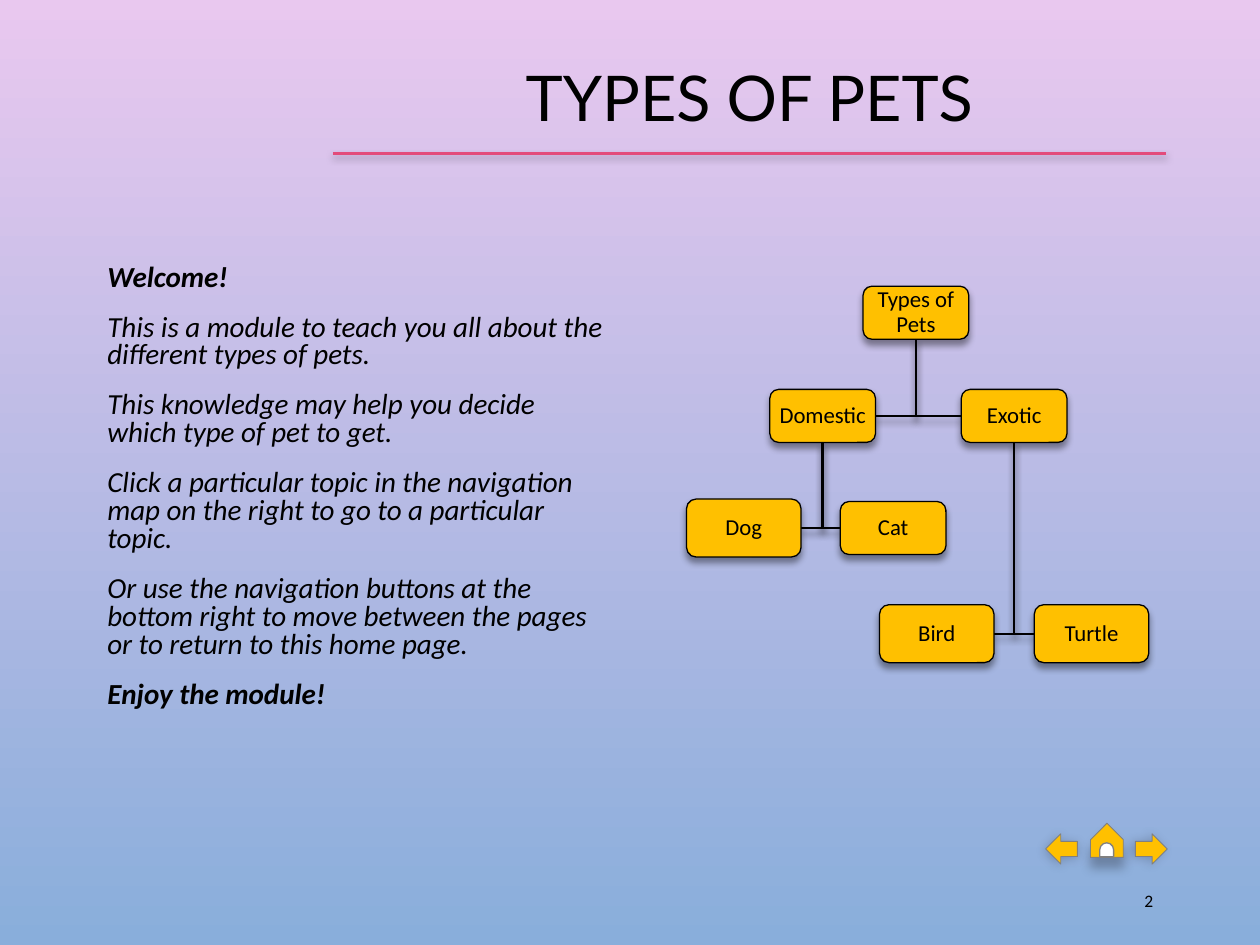
"""Build the home slide of a module on types of pets."""
from dataclasses import dataclass

from lxml import etree
from pptx import Presentation
from pptx.dml.color import RGBColor
from pptx.enum.shapes import MSO_CONNECTOR, MSO_SHAPE
from pptx.enum.text import MSO_ANCHOR, MSO_AUTO_SIZE, PP_ALIGN
from pptx.oxml.ns import qn
from pptx.util import Cm, Pt

ROUND = MSO_SHAPE.ROUNDED_RECTANGLE
HOUSE = MSO_SHAPE.PENTAGON
DOOR = MSO_SHAPE.FLOWCHART_DELAY
BACK = MSO_SHAPE.LEFT_ARROW
NEXT = MSO_SHAPE.RIGHT_ARROW
LINE = MSO_CONNECTOR.STRAIGHT
MIDDLE, TOP = MSO_ANCHOR.MIDDLE, MSO_ANCHOR.TOP
CENTER, LEFT, RIGHT = PP_ALIGN.CENTER, PP_ALIGN.LEFT, PP_ALIGN.RIGHT
FIXED = MSO_AUTO_SIZE.NONE


@dataclass(frozen=True)
class Theme:
    """Colours, fonts and type sizes of the slide."""
    ink: str = "000000"
    gold: str = "FFC000"
    pink: str = "E34B7A"
    grey: str = "808080"
    white: str = "FFFFFF"
    sky: tuple = ("E9C8EF", "89AEDB")
    head: str = "Lato"
    text: str = "Calibri"
    title: float = 36
    body: float = 16.6
    node: float = 13
    small: float = 10


THEME = Theme()
SMALL, LARGE = (2.13, 1.07), (2.31, 1.17)
NODES = {
    "Types of Pets": (17.4, 5.77, *SMALL),
    "Domestic": (15.52, 7.85, *SMALL),
    "Cat": (16.94, 10.11, *SMALL),
    "Dog": (13.84, 10.06, *LARGE),
    "Exotic": (19.38, 7.85, *SMALL),
    "Bird": (17.73, 12.19, *LARGE),
    "Turtle": (20.85, 12.19, *LARGE),
}
LINKS = [
    ("Exotic", "Turtle", 1),
    ("Exotic", "Bird", 1),
    ("Types of Pets", "Exotic", 1),
    ("Domestic", "Dog", 1.5),
    ("Domestic", "Cat", 1.25),
    ("Types of Pets", "Domestic", 1.25),
]
BODY = [
    "Welcome!",
    "This is a module to teach you all about the different types of pets.",
    "This knowledge may help you decide which type of pet to get.",
    "Click a particular topic in the navigation map on the right to go to a particular topic.",
    "Or use the navigation buttons at the bottom right to move between the pages "
    "or to return to this home page.",
    "Enjoy the module!",
]


def color(code):
    """Turn a hex code into a colour."""
    return RGBColor.from_string(code)


def place(shape, box):
    """Set place and size in centimetres."""
    shape.left, shape.top, shape.width, shape.height = map(Cm, box)


def stroke(shape, code, width):
    """Set line colour and width."""
    shape.line.color.rgb = color(code)
    shape.line.width = Pt(width)


def shade(shape, alpha=0, blur=4, dist=3, angle=90):
    """Give a shape its own shadow, or none when alpha is zero."""
    effect = etree.SubElement(shape._element.spPr, qn("a:effectLst"))
    if alpha:
        cast = etree.SubElement(
            effect, qn("a:outerShdw"), blurRad=str(Pt(blur)),
            dist=str(Pt(dist)), dir=str(angle * 60000), rotWithShape="0")
        tint = etree.SubElement(cast, qn("a:srgbClr"), val=THEME.ink)
        etree.SubElement(tint, qn("a:alpha"), val=str(alpha * 1000))


def write(shape, text, size, face=THEME.text, align=CENTER, anchor=MIDDLE, space=1.0):
    """Fill a text frame and format its runs."""
    frame = shape.text_frame
    frame.text = text
    frame.word_wrap = True
    frame.auto_size = FIXED
    frame.vertical_anchor = anchor
    for para in frame.paragraphs:
        para.alignment = align
        para.line_spacing = space
        para.space_before = Pt(0)
        for run in para.runs:
            run.font.size = Pt(size)
            run.font.name = face
            run.font.color.rgb = color(THEME.ink)
    return frame


def add_form(slide, kind, box, fill, line, width, shadow, turn=0):
    """Add a filled preset shape."""
    form = slide.shapes.add_shape(kind, *map(Cm, box))
    form.rotation = turn
    form.fill.solid()
    form.fill.fore_color.rgb = color(fill)
    stroke(form, line, width)
    shade(form, *shadow)
    return form


def add_link(slide, start, end, width):
    """Draw an elbow from under one node to the near side of another."""
    left, top, wide, high = NODES[start]
    x, y = left + wide / 2, top + high
    left, top, wide, high = NODES[end]
    side = left if left > x else left + wide
    mid = top + high / 2
    pen = slide.shapes.build_freeform(Cm(x), Cm(y))
    pen.add_line_segments([(Cm(x), Cm(mid)), (Cm(side), Cm(mid))], close=False)
    link = pen.convert_to_shape()
    link.fill.background()
    stroke(link, THEME.ink, width)
    shade(link, 40)


def add_node(slide, name, box):
    """Add one labelled node of the map."""
    node = add_form(slide, ROUND, box, THEME.gold, THEME.ink, 0.75, (40,))
    frame = write(node, name, THEME.node, space=0.9)
    frame.margin_left = frame.margin_right = Cm(0.03)
    frame.margin_top = frame.margin_bottom = Cm(0.03)


def add_nav(slide):
    """Add the home button between two arrows."""
    look = THEME.gold, THEME.grey, 0.5
    add_form(slide, HOUSE, (21.97, 16.61, 0.69, 0.66), *look, (25, 6, 6), 270)
    add_form(slide, NEXT, (22.89, 16.81, 0.64, 0.61), *look, (20, 6, 2, 170))
    add_form(slide, BACK, (21.08, 16.81, 0.64, 0.61), *look, (20, 6, 1, 135))
    add_form(slide, DOOR, (22.17, 16.99, 0.28, 0.28),
             THEME.white, THEME.grey, 0.75, (), 270)


def add_title(slide):
    """Fill the title and rule it off."""
    title = slide.shapes.title
    place(title, (6.71, 0.25, 16.79, 3.58))
    write(title, "TYPES OF PETS", THEME.title, THEME.head, space=0.9)
    rule = slide.shapes.add_connector(LINE, Cm(6.71), Cm(3.1), Cm(23.5), Cm(3.1))
    stroke(rule, THEME.pink, 1.75)
    shade(rule, 28, 4, 2)


def add_body(slide):
    """Fill the welcome text, bold at both ends."""
    body = slide.placeholders[1]
    place(body, (1.91, 5.21, 10.64, 9.5))
    frame = write(body, "\n".join(BODY), THEME.body, align=LEFT, anchor=TOP, space=0.8)
    last = len(BODY) - 1
    for spot, para in enumerate(frame.paragraphs):
        para.space_before = Pt(12.6 if spot else 0)
        props = para._p.get_or_add_pPr()
        props.set("marL", "0")
        props.set("indent", "0")
        etree.SubElement(props, qn("a:buNone"))
        for run in para.runs:
            run.font.italic = True
            run.font.bold = spot in (0, last)


def paint(slide):
    """Fill the background from top to bottom."""
    fill = slide.background.fill
    fill.gradient()
    fill.gradient_angle = 270
    for stop, code, spot in zip(fill.gradient_stops, THEME.sky, (0, 1)):
        stop.color.rgb = color(code)
        stop.position = spot


def main():
    """Build and save the slide."""
    deck = Presentation()
    deck.slide_width, deck.slide_height = Cm(25.4), Cm(19.05)
    slide = deck.slides.add_slide(deck.slide_layouts[1])
    paint(slide)
    add_title(slide)
    add_nav(slide)
    add_body(slide)
    for link in LINKS:
        add_link(slide, *link)
    for name, box in NODES.items():
        add_node(slide, name, box)
    page = slide.shapes.add_textbox(*map(Cm, (21.9, 17.65, 1.6, 1.02)))
    write(page, "2", THEME.small, align=RIGHT)
    deck.save("out.pptx")


if __name__ == "__main__":
    main()
